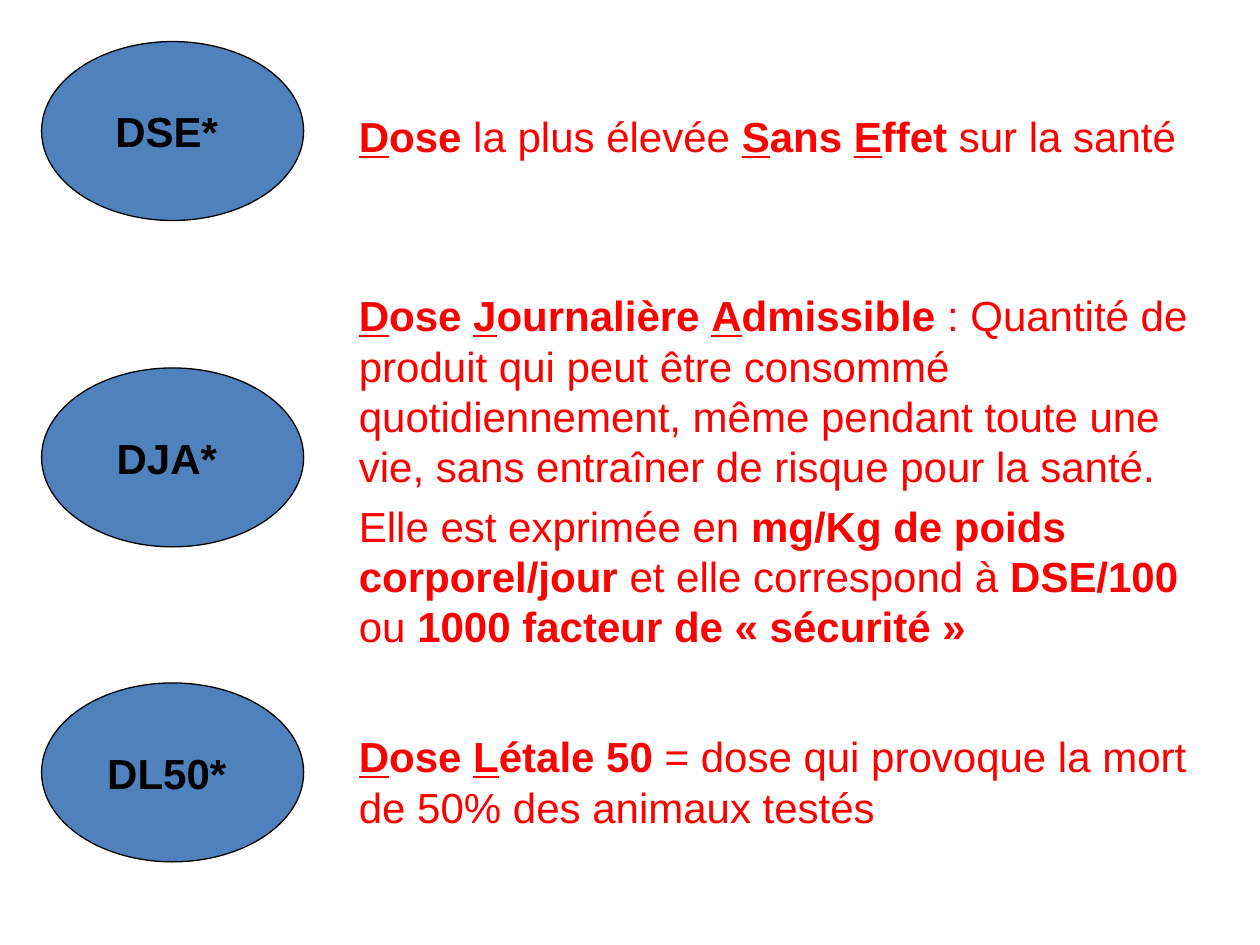
from pptx import Presentation
from pptx.dml.color import RGBColor
from pptx.enum.shapes import MSO_SHAPE
from pptx.enum.text import MSO_ANCHOR, PP_ALIGN
from pptx.util import Inches, Pt

# Content: runs are (text, style), where b is bold and u is underlined
DOSES = [("DSE* ", 0.33), ("DJA* ", 2.92), ("DL50* ", 5.42)]  # label, top

DEFINITIONS = [  # top, height, runs
    (0.83, 0.5, [
        ("D", "bu"), ("ose ", "b"), ("la plus élevée ", ""), ("S", "bu"),
        ("ans ", "b"), ("E", "bu"), ("ffet", "b"), (" sur la santé", "")]),
    (2.25, 1.7, [
        ("D", "bu"), ("ose ", "b"), ("J", "bu"), ("ournalière ", "b"),
        ("A", "bu"), ("dmissible ", "b"),
        (": Quantité de produit qui peut être consommé quotidiennement, "
         "même pendant toute une vie, sans entraîner de risque pour la santé.", "")]),
    (3.92, 1.3, [
        ("Elle est exprimée en ", ""), ("mg/Kg de poids corporel/jour", "b"),
        (" et elle correspond à ", ""), ("DSE/100", "b"), (" ou ", ""),
        ("1000 facteur de « sécurité »", "b")]),
    (5.75, 0.9, [
        ("D", "bu"), ("ose ", "b"), ("L", "bu"), ("étale 50", "b"),
        (" = dose qui provoque la mort de 50% des animaux testés", "")]),
]

BLUE, BLACK, RED = "4F81BD", "000000", "FF0000"


def rgb(value):
    return RGBColor.from_string(value)


def add_runs(paragraph, runs, color):
    for text, style in runs:
        run = paragraph.add_run()
        run.text = text
        font = run.font
        font.name, font.size = "Arial", Pt(24)
        font.bold = "b" in style
        font.underline = "u" in style
        font.color.rgb = rgb(color)


prs = Presentation()
prs.slide_width, prs.slide_height = Inches(10), Inches(7.5)
slide = prs.slides.add_slide(prs.slide_layouts[6])

# Ellipses with the abbreviations
for label, top in DOSES:
    ellipse = slide.shapes.add_shape(
        MSO_SHAPE.OVAL, Inches(0.33), Inches(top), Inches(2.08), Inches(1.42))
    ellipse.shadow.inherit = False
    ellipse.fill.solid()
    ellipse.fill.fore_color.rgb = rgb(BLUE)
    ellipse.line.color.rgb = rgb(BLACK)
    ellipse.line.width = Pt(0.75)
    frame = ellipse.text_frame
    frame.word_wrap = False
    frame.vertical_anchor = MSO_ANCHOR.MIDDLE
    frame.paragraphs[0].alignment = PP_ALIGN.CENTER
    add_runs(frame.paragraphs[0], [(label, "b")], BLACK)

# Definitions in the right-hand column
for top, height, runs in DEFINITIONS:
    definition = slide.shapes.add_textbox(
        Inches(2.75), Inches(top), Inches(6.92), Inches(height))
    definition.text_frame.word_wrap = True
    add_runs(definition.text_frame.paragraphs[0], runs, RED)

prs.save("out.pptx")
